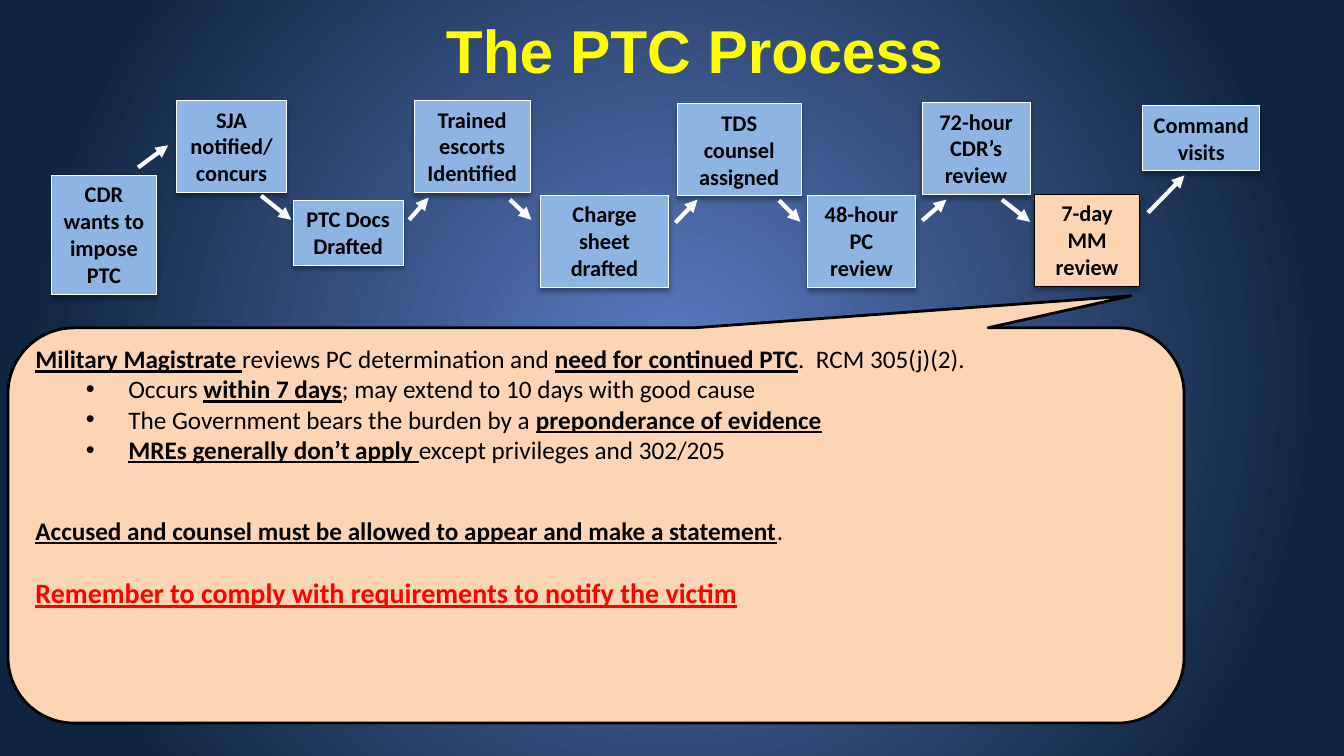
"""Build the PTC process slide: a zigzag of steps with a callout on the seven-day review."""
from lxml import etree
from pptx import Presentation
from pptx import util as u
from pptx.dml.color import RGBColor
from pptx.enum import shapes, text
from pptx.oxml.ns import qn

COLORS = {"glow": "5E7CC5", "navy": "0F243E", "title": "FFFF00", "step": "8EB4E3",
          "focus": "FCD5B5", "white": "FFFFFF", "black": "000000", "alert": "FF0000"}

STEPS = [
    (1.3, 4.42, 2.64, 4, "CDR wants to impose PTC"),
    (4.45, 2.54, 2.77, 3, "SJA notified/ concurs"),
    (7.39, 5.05, 2.77, 2, "PTC Docs\nDrafted"),
    (10.44, 2.54, 2.92, 3, "Trained escorts Identified"),
    (13.61, 4.93, 3.25, 3, "Charge sheet drafted"),
    (17.07, 2.62, 3.12, 3, "TDS counsel assigned"),
    (20.35, 4.93, 2.72, 3, "48-hour PC review"),
    (23.24, 2.59, 2.72, 3, "72-hour CDR’s review"),
    (26.06, 4.9, 2.67, 3, "7-day MM review"),
    (28.8, 2.67, 2.95, 2, "Command visits"),
]
ARROWS = [
    (3.48, 4.22, 4.24, 3.66), (6.58, 4.93, 7.34, 5.54), (10.31, 5.54, 10.8, 4.98),
    (12.85, 5.03, 13.39, 5.54), (17.02, 5.61, 17.58, 5.03), (19.63, 5.05, 20.17, 5.59),
    (23.24, 5.56, 23.85, 5.03), (25.25, 5.03, 25.96, 5.59), (28.93, 5.36, 29.85, 4.42),
]
LINES = [
    {"runs": [("Military Magistrate ", True), ("reviews PC determination and ", False),
              ("need for continued PTC", True), (".  RCM 305(j)(2).", False)]},
    {"bullet": True, "runs": [("Occurs ", False), ("within 7 days", True),
                              ("; may extend to 10 days with good cause", False)]},
    {"bullet": True, "runs": [("The Government bears the burden by a ", False),
                              ("preponderance of evidence", True)]},
    {"bullet": True, "runs": [("MREs generally don’t apply ", True),
                              ("except privileges and 302/205", False)]},
    {"before": 36, "runs": [
        ("Accused and counsel must be allowed to appear and make a statement", True),
        (".", False)]},
    {"before": 22, "size": 20, "color": "alert",
     "runs": [("Remember to comply with requirements to notify the victim", True)]},
]


class ProcessSlide:
    """Hold the slide and its style, with one method per kind of element."""

    def __init__(self, presentation):
        """Add a slide with title and body placeholders."""
        self.slide = presentation.slides.add_slide(presentation.slide_layouts[1])
        self.shapes = self.slide.shapes
        self.font = "Calibri"

    def color(self, name):
        """Return a named colour."""
        return RGBColor.from_string(COLORS[name])

    def place(self, shape, left, top, width, height):
        """Move and size a shape in centimetres."""
        shape.left, shape.top = u.Cm(left), u.Cm(top)
        shape.width, shape.height = u.Cm(width), u.Cm(height)

    def style(self, font, size, color, bold, name=None):
        """Format a font."""
        font.name, font.size, font.bold = name or self.font, u.Pt(size), bold
        font.color.rgb = self.color(color)

    def background(self):
        """Paint a round glow behind the slide."""
        fill = self.slide.background.fill
        fill.gradient()
        for stop, name, position in zip(fill.gradient_stops, ("glow", "navy"), (0, 0.85)):
            stop.color.rgb = self.color(name)
            stop.position = position
        gradient = next(self.slide.element.iter(qn("a:gradFill")))
        gradient.remove(gradient.find(qn("a:lin")))
        circle = etree.SubElement(gradient, qn("a:path"), path="circle")
        etree.SubElement(circle, qn("a:fillToRect"),
                         {side: "50000" for side in "ltrb"})

    def title(self, words, *box):
        """Fill the title placeholder."""
        title = self.shapes.title
        self.place(title, *box)
        frame = title.text_frame
        frame.text = words
        frame.vertical_anchor = text.MSO_ANCHOR.MIDDLE
        frame.auto_size = text.MSO_AUTO_SIZE.NONE
        frame.paragraphs[0].alignment = text.PP_ALIGN.CENTER
        self.style(frame.paragraphs[0].runs[0].font, 43.2, "title", True, "Arial")

    def block(self, kind, box, fill, line, width):
        """Draw a filled and outlined shape without a shadow."""
        shape = self.shapes.add_shape(kind, *(u.Cm(value) for value in box))
        shape.shadow.inherit = False
        shape.fill.solid()
        shape.fill.fore_color.rgb = self.color(fill)
        shape.line.color.rgb = self.color(line)
        shape.line.width = u.Pt(width)
        return shape

    def callout(self, *box):
        """Draw the speech bubble, turned so that its tip points up."""
        bubble = self.block(shapes.MSO_SHAPE.ROUNDED_RECTANGULAR_CALLOUT, box,
                            "focus", "black", 2)
        bubble.rotation = 180
        for index, value in enumerate((-0.455, 0.581, 0.167)):
            bubble.adjustments[index] = value

    def body(self, lines, *box):
        """Fill the body placeholder and bring it in front of the callout."""
        body = self.slide.placeholders[1]
        self.place(body, *box)
        body.element.getparent().append(body.element)
        frame = body.text_frame
        frame.auto_size = text.MSO_AUTO_SIZE.NONE
        frame.vertical_anchor = text.MSO_ANCHOR.TOP
        for index, line in enumerate(lines):
            paragraph = frame.add_paragraph() if index else frame.paragraphs[0]
            self.body_line(paragraph, **line)

    def body_line(self, paragraph, runs, bullet=False, before=0, size=18, color="black"):
        """Write a plain or bulleted paragraph with underlined emphasis."""
        properties = paragraph._p.get_or_add_pPr()
        properties.set("marL", str(u.Cm(2.34) if bullet else 0))
        properties.set("indent", str(u.Cm(-1.07) if bullet else 0))
        if bullet:
            paragraph.level = 1
            etree.SubElement(properties, qn("a:buFont"), typeface="Arial")
            etree.SubElement(properties, qn("a:buChar"), char="•")
        else:
            etree.SubElement(properties, qn("a:buNone"))
        paragraph.space_before = u.Pt(before)
        for words, strong in runs:
            run = paragraph.add_run()
            run.text = words
            self.style(run.font, size, color, strong)
            run.font.underline = strong

    def step(self, left, top, width, rows, words):
        """Draw a process box as tall as its rows of text."""
        focus = words.startswith("7-day")
        box = self.block(shapes.MSO_SHAPE.RECTANGLE, (left, top, width, 0.25 + 0.69 * rows),
                         "focus" if focus else "step", "black" if focus else "white", 0.75)
        effects = box.element.spPr.find(qn("a:effectLst"))
        shadow = etree.SubElement(effects, qn("a:outerShdw"), blurRad=str(u.Pt(3.5)),
                                  dist=str(u.Pt(2.2)), dir="5400000", rotWithShape="0")
        tint = etree.SubElement(shadow, qn("a:srgbClr"), val=COLORS["black"])
        etree.SubElement(tint, qn("a:alpha"), val="32000")
        frame = box.text_frame
        frame.text = words
        frame.word_wrap = True
        frame.vertical_anchor = text.MSO_ANCHOR.TOP
        for paragraph in frame.paragraphs:
            paragraph.alignment = text.PP_ALIGN.CENTER
            self.style(paragraph.runs[0].font, 16, "black", True)

    def arrow(self, *ends):
        """Draw a white arrow between two points."""
        arrow = self.shapes.add_connector(shapes.MSO_CONNECTOR.STRAIGHT,
                                          *(u.Cm(value) for value in ends))
        arrow.line.color.rgb = self.color("white")
        arrow.line.width = u.Pt(3)
        etree.SubElement(arrow.line._get_or_add_ln(), qn("a:tailEnd"), type="triangle")
        etree.SubElement(arrow._element.spPr, qn("a:effectLst"))


def main():
    """Build and save the presentation."""
    presentation = Presentation()
    presentation.slide_width, presentation.slide_height = u.Cm(33.87), u.Cm(19.05)
    process = ProcessSlide(presentation)
    process.background()
    process.title("The PTC Process", 1.96, 0.2, 31.09, 2.11)
    process.callout(0.2, 8.26, 29.64, 9.96)
    process.body(LINES, 0.64, 8.53, 29.01, 8.03)
    for step in STEPS:
        process.step(*step)
    for arrow in ARROWS:
        process.arrow(*arrow)
    presentation.save("out.pptx")


if __name__ == "__main__":
    main()
